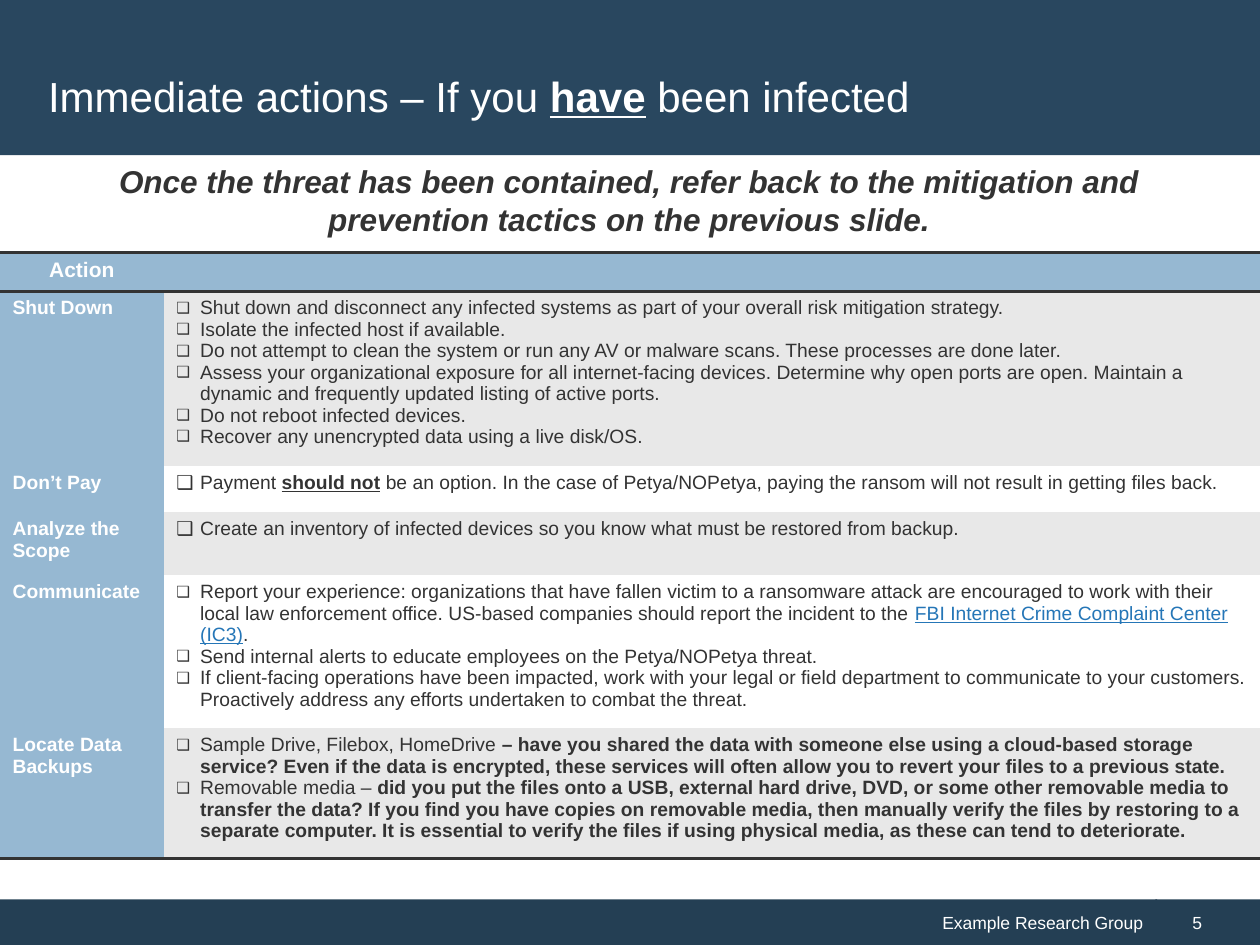
from lxml import etree
from pptx import Presentation
from pptx import util as u
from pptx.dml.color import RGBColor
from pptx.enum import shapes, text
from pptx.oxml import ns

Cm, Pt = u.Cm, u.Pt
WHITE, INK, NAVY, DEEP = "FFFFFF", "333333", "29475F", "243F54"
BLUE, GREY, LINK = "96B8D2", "E8E8E8", "2576B7"
NO_STYLE = "{2D5ABB26-0587-4C30-8999-92F81FD0307C}"

# Content: a paragraph is a list of (text, style); styles are b, u and link
TITLE = [("Immediate actions – If you ", ""), ("have", "bu"), (" been infected", "")]
SUBTITLE = [("Once the threat has been contained, refer back to the mitigation and "
             "prevention tactics on the previous slide.", "")]
FOOTER = [("Example Research Group", "")]
PAGE = [("5", "")]

# label, row height in cm, bullet size in percent, actions
ROWS = [
    ("Shut Down", 3.1, 80, [
        [("Shut down and disconnect any infected systems as part of your overall risk mitigation strategy.", "")],
        [("Isolate the infected host if available.", "")],
        [("Do not attempt to clean the system or run any AV or malware scans. These processes are done later.", "")],
        [("Assess your organizational exposure for all internet-facing devices. Determine why open ports are "
          "open. Maintain a dynamic and frequently updated listing of active ports.", "")],
        [("Do not reboot infected devices.", "")],
        [("Recover any unencrypted data using a live disk/OS.", "")]]),
    ("Don’t Pay", 0.94, 100, [
        [("Payment ", ""), ("should not", "bu"),
         (" be an option. In the case of Petya/NOPetya, paying the ransom will not result in "
          "getting files back.", "")]]),
    ("Analyze the Scope", 1.27, 100, [
        [("Create an inventory of infected devices so you know what must be restored from backup.", "")]]),
    ("Communicate", 3.08, 80, [
        [("Report your experience: organizations that have fallen victim to a ransomware attack are encouraged "
          "to work with their local law enforcement office. US-based companies should report the incident to "
          "the ", ""), ("FBI Internet Crime Complaint Center (IC3)", "link"), (".", "")],
        [("Send internal alerts to educate employees on the Petya/NOPetya threat.", "")],
        [("If client-facing operations have been impacted, work with your legal or field department to "
          "communicate to your customers. Proactively address any efforts undertaken to combat the threat.", "")]]),
    ("Locate Data Backups", 2.62, 80, [
        [("Sample Drive, Filebox, HomeDrive ", ""),
         ("– have you shared the data with someone else using a cloud-based storage service? Even if the data "
          "is encrypted, these services will often allow you to revert your files to a previous state.", "b")],
        [("Removable media – ", ""),
         ("did you put the files onto a USB, external hard drive, DVD, or some other removable media to transfer "
          "the data? If you find you have copies on removable media, then manually verify the files by restoring "
          "to a separate computer. It is essential to verify the files if using physical media, as these can "
          "tend to deteriorate.", "b")]]),
]
HEADER_H = 0.78


def rgb(value):
    return RGBColor.from_string(value)


def write(p, runs, size, color, bold=False, italic=False, align=text.PP_ALIGN.LEFT):
    p.alignment = align
    f = p.font
    f.name, f.size, f.bold, f.italic = "Arial", Pt(size), bold, italic
    f.color.rgb = rgb(color)
    for words, style in runs:
        r = p.add_run()
        r.text = words
        if style == "link":
            r.font.color.rgb = rgb(LINK)
            r.font.underline = True
        elif style:
            r.font.bold = True
            r.font.underline = "u" in style
    # the paragraph mark takes the text size, so rows keep their height
    etree.SubElement(p._p, ns.qn("a:endParaRPr"), sz=str(size * 100))


def bullet(p, percent):
    pPr = p._p.get_or_add_pPr()
    pPr.set("marL", str(Cm(0.48)))
    pPr.set("indent", str(-Cm(0.48)))
    # bullet elements come before the paragraph's default run properties
    default = pPr.find(ns.qn("a:defRPr"))
    for tag, key, value in (("a:buSzPct", "val", str(percent * 1000)),
                            ("a:buFont", "typeface", "Arial"),
                            ("a:buChar", "char", "❑")):
        default.addprevious(etree.Element(ns.qn(tag), {key: value}))


def fill_cell(cell, color):
    cell.fill.solid()
    cell.fill.fore_color.rgb = rgb(color)


def border(cell, *sides):
    tcPr = cell._tc.get_or_add_tcPr()
    for i, side in enumerate(sides):
        ln = etree.Element(ns.qn("a:ln" + side), w=str(Pt(2)))
        fill = etree.SubElement(ln, ns.qn("a:solidFill"))
        etree.SubElement(fill, ns.qn("a:srgbClr"), val=INK)
        tcPr.insert(i, ln)


def band(x, y, w, h, color):
    sp = s.shapes.add_shape(shapes.MSO_SHAPE.RECTANGLE, Cm(x), Cm(y), Cm(w), Cm(h))
    sp.shadow.inherit = False
    sp.fill.solid()
    sp.fill.fore_color.rgb = rgb(color)
    sp.line.fill.background()
    sp.text_frame.vertical_anchor = text.MSO_ANCHOR.MIDDLE
    return sp.text_frame


def textbox(x, y, w, h):
    tf = s.shapes.add_textbox(Cm(x), Cm(y), Cm(w), Cm(h)).text_frame
    tf.word_wrap = True
    return tf


prs = Presentation()
prs.slide_width, prs.slide_height = Cm(25.4), Cm(19.05)
s = prs.slides.add_slide(prs.slide_layouts[6])

# Footer bands, overlapping slightly so that no seam shows
tf = band(0, 18.13, 23.33, 0.94, DEEP)
tf.margin_right = Cm(0.29)
write(tf.paragraphs[0], FOOTER, 10, WHITE, align=text.PP_ALIGN.RIGHT)
tf = band(23.29, 18.13, 2.11, 0.94, DEEP)
tf.margin_left = Cm(0.75)
write(tf.paragraphs[0], PAGE, 10, WHITE)

# Title band
band(0, 0, 25.4, 3.13, NAVY)
tf = textbox(0.72, 0.71, 23.95, 2.44)
tf.vertical_anchor = text.MSO_ANCHOR.MIDDLE
write(tf.paragraphs[0], TITLE, 24, WHITE)

# Action table
heights = [HEADER_H] + [row[1] for row in ROWS]
table = s.shapes.add_table(len(heights), 2, 0, Cm(5.09), Cm(25.4), Cm(sum(heights))).table
table.first_row = table.horz_banding = False
table._tbl.tblPr.find(ns.qn("a:tableStyleId")).text = NO_STYLE
for col, w in zip(table.columns, (3.3, 22.1)):
    col.width = Cm(w)
for row, h in zip(table.rows, heights):
    row.height = Cm(h)

for c, runs in enumerate(([("Action", "")], [])):
    head = table.cell(0, c)
    write(head.text_frame.paragraphs[0], runs, 12, WHITE, bold=True, align=text.PP_ALIGN.CENTER)
    fill_cell(head, BLUE)
    border(head, "T", "B")

for i, (label, _, percent, actions) in enumerate(ROWS, 1):
    name, detail = table.cell(i, 0), table.cell(i, 1)
    fill_cell(name, BLUE)
    fill_cell(detail, GREY if i % 2 else WHITE)
    write(name.text_frame.paragraphs[0], [(label, "")], 11, WHITE, bold=True)
    tf = detail.text_frame
    for j, runs in enumerate(actions):
        p = tf.add_paragraph() if j else tf.paragraphs[0]
        write(p, runs, 11, INK)
        bullet(p, percent)
for c in range(2):
    border(table.cell(len(ROWS), c), "B")

# Subtitle
tf = textbox(0.48, 3.15, 24.41, 1.8)
write(tf.paragraphs[0], SUBTITLE, 18, INK, bold=True, italic=True, align=text.PP_ALIGN.CENTER)

prs.save("out.pptx")
